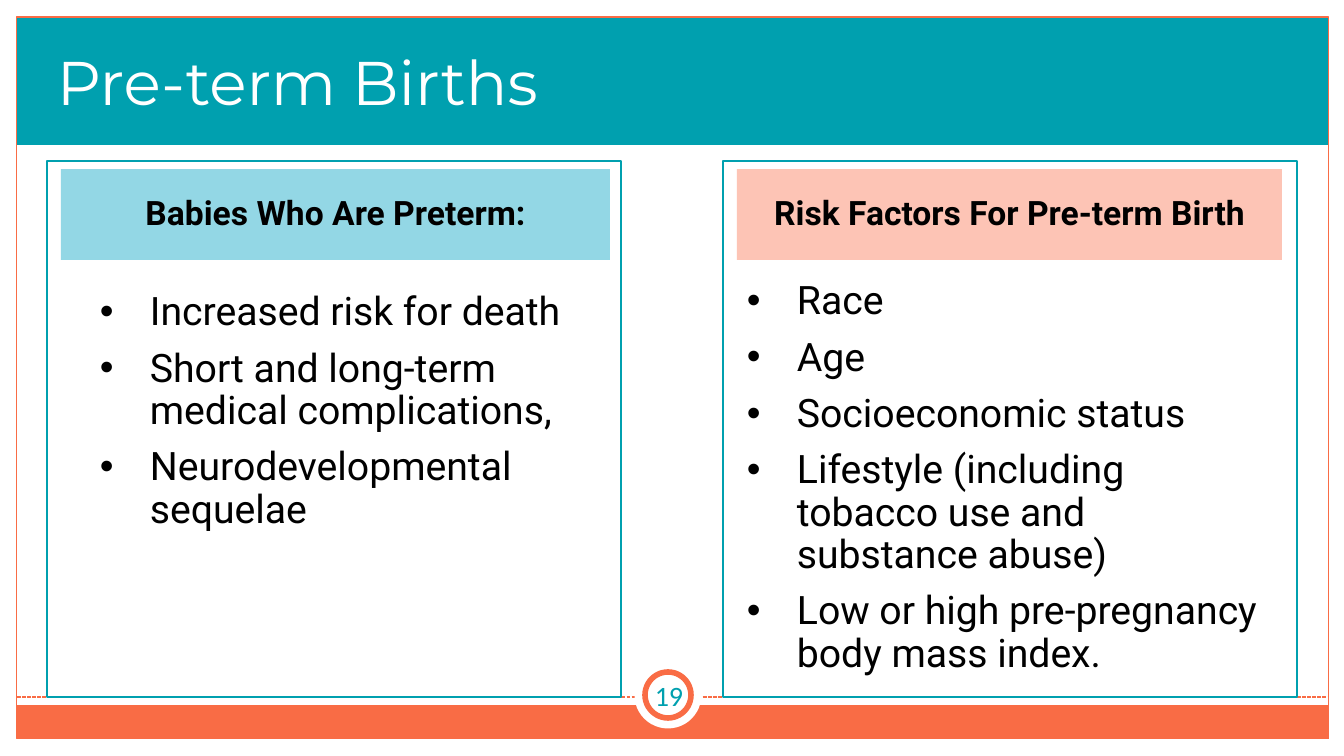
from lxml import etree
from pptx import Presentation
from pptx import util as u
from pptx.dml.color import RGBColor
from pptx.enum import dml, shapes, text
from pptx.oxml.ns import qn

# Content
TITLE = "Pre-term Births"
PAGE = "19"
COLUMNS = [
    {"heading": "Babies Who Are Preterm:", "tint": "93D7E5",
     "heading_width": 549, "list_box": (43, 126, 489, 371),
     "points": ["Increased risk for death",
                "Short and long-term medical complications,",
                "Neurodevelopmental sequelae"]},
    {"heading": "Risk Factors For Pre-term Birth", "tint": "FDC4B5",
     "heading_width": 545, "list_box": (14, 115, 545, 406),
     "points": ["Race", "Age", "Socioeconomic status",
                "Lifestyle (including tobacco use and substance abuse)",
                "Low or high pre-pregnancy body mass index."]},
]

THEME = {
    "teal": "00A0AF", "orange": "F96C45", "white": "FFFFFF", "black": "000000",
    "title_font": "Montserrat", "body_font": "Roboto", "page_font": "Calibri",
    "title_size": 44, "heading_size": 24, "list_size": 28, "page_size": 20,
}

# Geometry in px
PX = 914400 / 100.8
SLIDE_W, SLIDE_H = 1344, 756
EDGE, INNER_W = 17, 1312
COLUMN_LEFT, COLUMN_TOP, COLUMN_W, COLUMN_H = 47, 161, 574, 536
COLUMN_STEP = 676
HEADING_INSET, HEADING_DROP, HEADING_H = 14, 8, 91
LIST_INDENT = 50
BADGE_X, BADGE_Y = 668, 695


def px(length):
    return u.Emu(round(length * PX))


prs = Presentation()
prs.slide_width, prs.slide_height = px(SLIDE_W), px(SLIDE_H)
slide = prs.slides.add_slide(prs.slide_layouts[6])


def add_block(box, fill=None, line=None, width=1, kind=shapes.MSO_SHAPE.RECTANGLE):
    block = slide.shapes.add_shape(kind, *map(px, box))
    block.shadow.inherit = False
    if fill:
        block.fill.solid()
        block.fill.fore_color.rgb = RGBColor.from_string(fill)
    else:
        block.fill.background()
    if line:
        block.line.color.rgb = RGBColor.from_string(line)
        block.line.width = u.Pt(width)
    else:
        block.line.fill.background()
    return block


def add_circle(diameter, **style):
    corner = (BADGE_X - diameter / 2, BADGE_Y - diameter / 2)
    return add_block((*corner, diameter, diameter),
                     kind=shapes.MSO_SHAPE.OVAL, **style)


def add_bullet(paragraph):
    props = paragraph._p.get_or_add_pPr()
    props.set("marL", str(px(LIST_INDENT)))
    props.set("indent", str(-px(LIST_INDENT)))
    etree.SubElement(props, qn("a:buFont"), typeface="Arial")
    etree.SubElement(props, qn("a:buChar"), char="•")


def write(holder, lines, font, size, color=THEME["black"], bold=False,
          align=text.PP_ALIGN.LEFT, anchor=text.MSO_ANCHOR.TOP,
          spacing=0.9, before=0, bullets=False):
    frame = holder.text_frame
    frame.word_wrap = True
    frame.vertical_anchor = anchor
    for i, line in enumerate(lines):
        paragraph = frame.add_paragraph() if i else frame.paragraphs[0]
        paragraph.alignment = align
        paragraph.line_spacing = spacing
        paragraph.space_before = u.Pt(before)
        if bullets:
            add_bullet(paragraph)
        run = paragraph.add_run()
        run.text = line
        run.font.name, run.font.size, run.font.bold = font, u.Pt(size), bold
        run.font.color.rgb = RGBColor.from_string(color)


def add_text(box, lines, **style):
    write(slide.shapes.add_textbox(*map(px, box)), lines, **style)


# Title band, footer band and slide border
add_block((EDGE, 18, INNER_W, 127), fill=THEME["teal"])
add_block((EDGE, 705, INNER_W, 34), fill=THEME["orange"])
add_block((EDGE, EDGE, INNER_W, 722), line=THEME["orange"], width=0.75)

# Dashed rule above the footer
rule_y = COLUMN_TOP + COLUMN_H
rule = slide.shapes.add_connector(shapes.MSO_CONNECTOR.STRAIGHT, px(EDGE), px(rule_y),
                                  px(EDGE + INNER_W), px(rule_y))
rule.line.color.rgb = RGBColor.from_string(THEME["orange"])
rule.line.width = u.Pt(0.9)
rule.line.dash_style = dml.MSO_LINE.SQUARE_DOT
etree.SubElement(rule._element.spPr, qn("a:effectLst"))

# Page number badge
add_circle(67, fill=THEME["white"])
add_circle(46, fill=THEME["white"], line=THEME["orange"], width=4)
add_text((626, 671, 86, 48), [PAGE], font=THEME["page_font"],
         size=THEME["page_size"], color=THEME["teal"], spacing=1.0,
         align=text.PP_ALIGN.CENTER, anchor=text.MSO_ANCHOR.MIDDLE)

# Title
add_text((COLUMN_LEFT, 47, 1014, 48), [TITLE], font=THEME["title_font"],
         size=THEME["title_size"], color=THEME["white"])

# Framed columns, each with a heading and a bulleted list
for i, column in enumerate(COLUMNS):
    left = COLUMN_LEFT + i * COLUMN_STEP
    add_block((left, COLUMN_TOP, COLUMN_W, COLUMN_H), line=THEME["teal"])
    heading = add_block((left + HEADING_INSET, COLUMN_TOP + HEADING_DROP,
                         column["heading_width"], HEADING_H), fill=column["tint"])
    write(heading, [column["heading"]], font=THEME["body_font"],
          size=THEME["heading_size"], bold=True, before=10,
          align=text.PP_ALIGN.CENTER, anchor=text.MSO_ANCHOR.MIDDLE)
    dx, dy, width, height = column["list_box"]
    add_text((left + dx, COLUMN_TOP + dy, width, height), column["points"],
             font=THEME["body_font"], size=THEME["list_size"],
             before=10, bullets=True)

prs.save("out.pptx")
